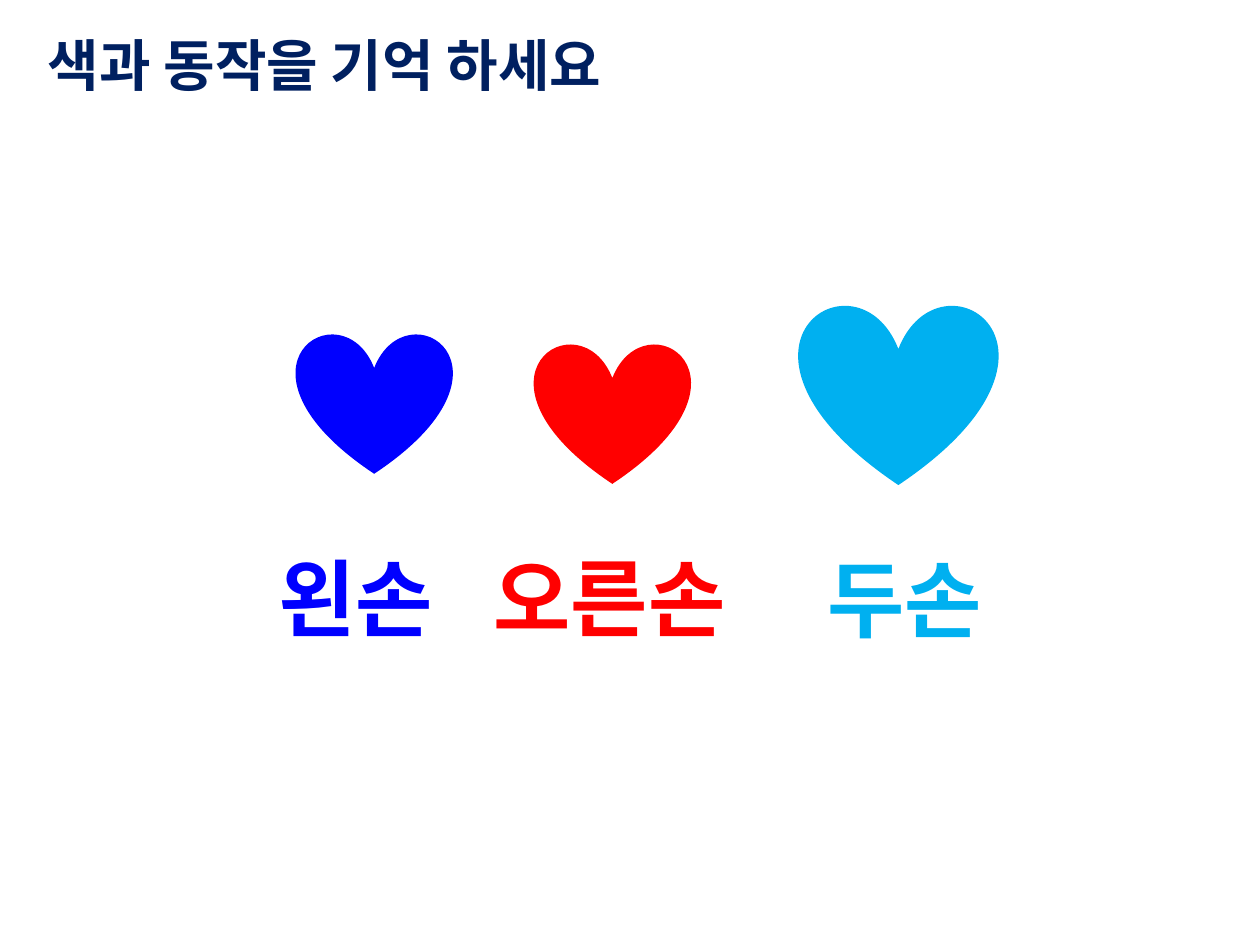
import pptx
import pptx.dml.color
import pptx.enum.shapes
import pptx.enum.text
import pptx.oxml
import pptx.oxml.ns
import pptx.util
from dataclasses import dataclass

Inches = pptx.util.Inches


@dataclass(frozen=True)
class Theme:
    font: str = "Noto Sans CJK KR"
    navy: str = "002060"
    blue: str = "0000FF"
    red: str = "FF0000"
    sky: str = "00B0F0"
    title_size: int = 32
    label_size: int = 48


THEME = Theme()

# label, colour, heart box, label box
HANDS = [
    ("왼손", THEME.blue, (2.35, 2.64, 1.24, 1.12), (2.11, 4.28, 1.55, 0.91)),
    ("오른손", THEME.red, (4.24, 2.72, 1.24, 1.12), (3.82, 4.28, 2.22, 0.91)),
    ("두손", THEME.sky, (6.34, 2.41, 1.58, 1.44), (6.47, 4.29, 1.56, 0.91)),
]


def rgb(value):
    return pptx.dml.color.RGBColor.from_string(value)


def set_text(sp, text, size, color, wrap):
    tf = sp.text_frame
    frame_format = {
        "word_wrap": wrap,
        "auto_size": pptx.enum.text.MSO_AUTO_SIZE.NONE,
        "vertical_anchor": pptx.enum.text.MSO_ANCHOR.MIDDLE,
    }
    for name, value in frame_format.items():
        setattr(tf, name, value)
    p = tf.paragraphs[0]
    p.alignment = pptx.enum.text.PP_ALIGN.LEFT
    r = p.add_run()
    r.text = text
    font_format = {"name": THEME.font, "size": pptx.util.Pt(size), "bold": True}
    for name, value in font_format.items():
        setattr(r.font, name, value)
    r.font.color.rgb = rgb(color)
    # Hangul takes its typeface from the East Asian font
    ea = pptx.oxml.parse_xml(
        f'<a:ea {pptx.oxml.ns.nsdecls("a")} typeface="{THEME.font}"/>')
    r.font._element.find(pptx.oxml.ns.qn("a:latin")).addnext(ea)


def add_title(s, text, box):
    sp = s.shapes.title
    for name, value in zip(("left", "top", "width", "height"), box):
        setattr(sp, name, Inches(value))
    set_text(sp, text, THEME.title_size, THEME.navy, False)


def add_heart(s, color, box):
    sp = s.shapes.add_shape(pptx.enum.shapes.MSO_SHAPE.HEART, *map(Inches, box))
    sp.shadow.inherit = False
    sp.fill.solid()
    sp.fill.fore_color.rgb = rgb(color)
    sp.line.fill.background()


def add_hand(s, label, color, heart_box, label_box):
    """Place a heart and the name of its hand in the same colour."""
    add_heart(s, color, heart_box)
    sp = s.shapes.add_textbox(*map(Inches, label_box))
    set_text(sp, label, THEME.label_size, color, True)


def main():
    prs = pptx.Presentation()
    prs.slide_width, prs.slide_height = Inches(10), Inches(7.5)
    s = prs.slides.add_slide(prs.slide_layouts.get_by_name("Title Only"))
    add_title(s, "색과 동작을 기억 하세요", (0.28, 0.19, 5.16, 0.64))
    for hand in HANDS:
        add_hand(s, *hand)
    prs.save("out.pptx")


if __name__ == "__main__":
    main()
